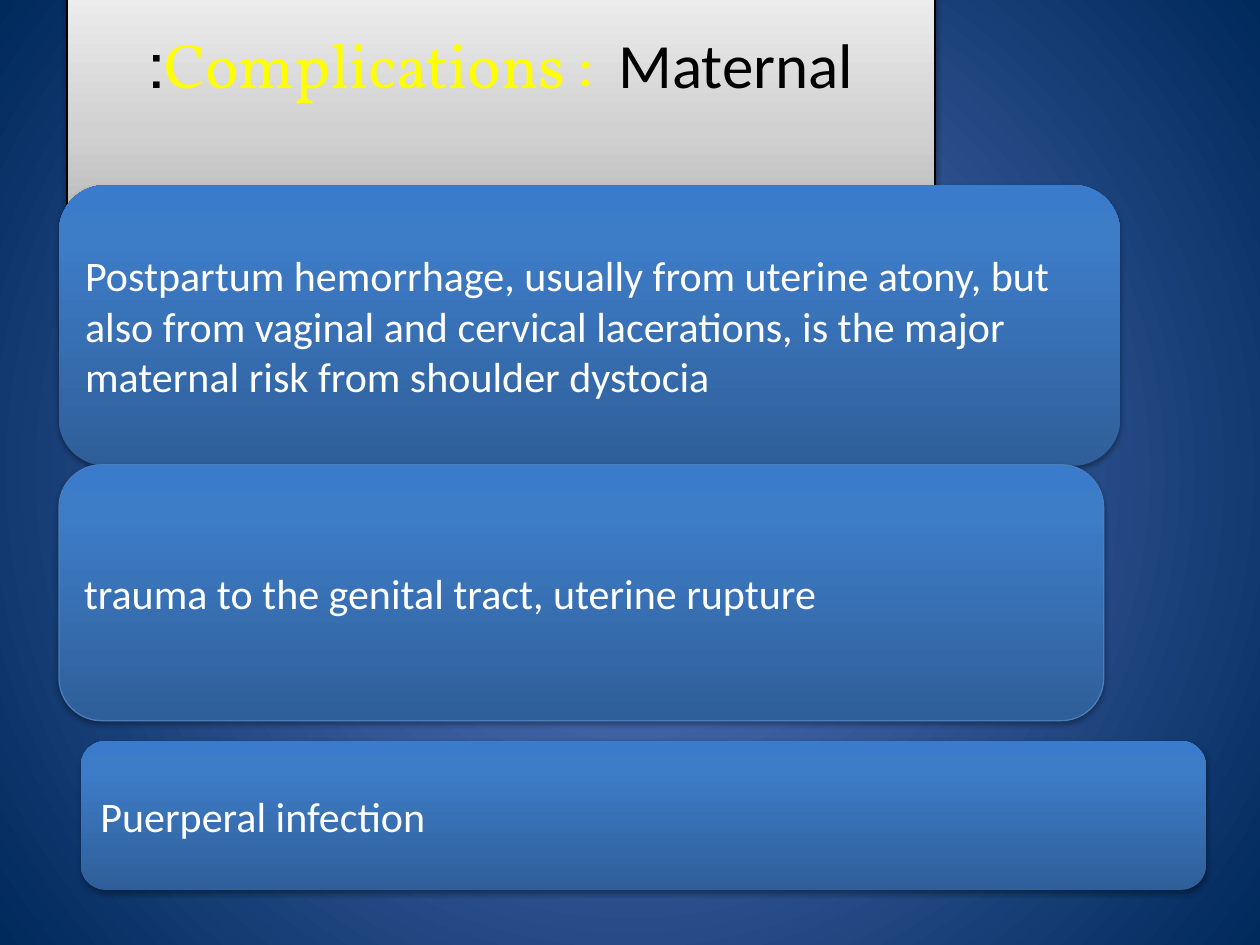
from lxml.etree import SubElement
from pptx import Presentation
from pptx.dml.color import RGBColor
from pptx.enum.shapes import MSO_SHAPE as SHAPE
from pptx.enum.text import MSO_ANCHOR as ANCHOR, MSO_AUTO_SIZE as AUTO, PP_ALIGN as ALIGN
from pptx.oxml.ns import qn
from pptx.util import Cm, Pt

SILVER = [(0, "BDBDBD"), (35, "D1D1D1"), (100, "EEEEEE")]
BLUE = [(0, "2F5F99"), (80, "3D7CC7"), (100, "3A7CCB")]
NIGHT = [(0, "5E7CC5"), (100, "00295C")]


def rgb(value):
    """Turn a hex string into a colour."""
    return RGBColor.from_string(value)


def add(parent, tag, **attrs):
    """Append a drawing element with the given attributes."""
    return SubElement(parent, qn(f"a:{tag}"), {k: str(v) for k, v in attrs.items()})


class Deck:
    """Hold the style and the current slide."""

    body = {"name": "Calibri", "size": Pt(24)}
    heading = {"size": Pt(36), "bold": False}

    def __init__(self):
        """Open a presentation with one title-only slide."""
        self.prs = Presentation()
        self.prs.slide_width, self.prs.slide_height = Cm(25.4), Cm(19.05)
        self.s = self.prs.slides.add_slide(self.prs.slide_layouts[5])

    def gradient(self, fill, root, stops, radial=False):
        """Fill with colour stops, upwards or from the centre."""
        fill.gradient()
        grad = root.find(f".//{qn('a:gradFill')}")
        for child in list(grad):
            grad.remove(child)
        gs_lst = add(grad, "gsLst")
        for pos, value in stops:
            add(add(gs_lst, "gs", pos=pos * 1000), "srgbClr", val=value)
        if radial:
            circle = add(grad, "path", path="circle")
            add(circle, "fillToRect", l=50000, t=50000, r=50000, b=50000)
        else:
            add(grad, "lin", ang=16200000, scaled=0)

    def background(self, stops):
        """Give the slide a radial background."""
        self.gradient(self.s.background.fill, self.s._element, stops, True)

    def finish(self, sp, stops, line, alpha, dist):
        """Set the gradient, outline and shadow of a shape."""
        self.gradient(sp.fill, sp._element, stops)
        if line:
            sp.line.color.rgb, sp.line.width = rgb(line), Pt(0.75)
        else:
            sp.line.fill.background()
        sp.shadow.inherit = False
        effects = sp._element.spPr.find(qn("a:effectLst"))
        shadow = add(effects, "outerShdw", blurRad=Pt(3.1), dist=Pt(dist),
                     dir=5400000, rotWithShape=0)
        add(add(shadow, "srgbClr", val="000000"), "alpha", val=alpha * 1000)

    def add_runs(self, p, runs, style, align, rtl):
        """Put coloured runs into a paragraph."""
        p.alignment = align
        if rtl:
            p._p.get_or_add_pPr().set("rtl", "1")
        for text, colour, extra in runs:
            r = p.add_run()
            r.text = text
            for key, value in {**style, **extra}.items():
                setattr(r.font, key, value)
            r.font.color.rgb = rgb(colour)

    def title(self, box, runs):
        """Shape the title placeholder as an arrow."""
        sp = self.s.shapes.title
        sp.left, sp.top, sp.width, sp.height = map(Cm, box)
        add(add(sp._element.spPr, "prstGeom", prst="rightArrow"), "avLst")
        self.finish(sp, SILVER, "000000", 38, 1.6)
        tf = sp.text_frame
        frame = {"word_wrap": True, "auto_size": AUTO.NONE,
                 "vertical_anchor": ANCHOR.MIDDLE, "margin_bottom": Cm(1.52)}
        for key, value in frame.items():
            setattr(tf, key, value)
        self.add_runs(tf.paragraphs[0], runs, self.heading, ALIGN.CENTER, True)

    def card(self, box, text, line=None, rtl=True):
        """Add a rounded blue card with left-set text."""
        sp = self.s.shapes.add_shape(SHAPE.ROUNDED_RECTANGLE, *map(Cm, box))
        self.finish(sp, BLUE, line, 35, 1.8)
        tf = sp.text_frame
        tf.word_wrap, tf.vertical_anchor = True, ANCHOR.MIDDLE
        self.add_runs(tf.paragraphs[0], [(text, "FFFFFF", {})], self.body, ALIGN.LEFT, rtl)


def main():
    """Build the slide on maternal complications."""
    deck = Deck()
    deck.background(NIGHT)
    deck.title((1.35, -0.28, 17.5, 4.5), [
        ("Complications :  ", "FFFF00", {"name": "Vollkorn"}),
        ("Maternal:", "000000", {"name": "Calibri"})])
    deck.card((1.19, 3.73, 21.39, 5.66),
              "Postpartum hemorrhage, usually from uterine atony, but also from vaginal "
              "and cervical lacerations, is the major maternal risk from shoulder dystocia")
    deck.card((1.19, 9.37, 21.06, 5.16), "trauma to the genital tract, uterine rupture",
              line="4B7EBC", rtl=False)
    deck.card((1.63, 14.94, 22.68, 3), "Puerperal infection")
    deck.prs.save("out.pptx")


if __name__ == "__main__":
    main()
